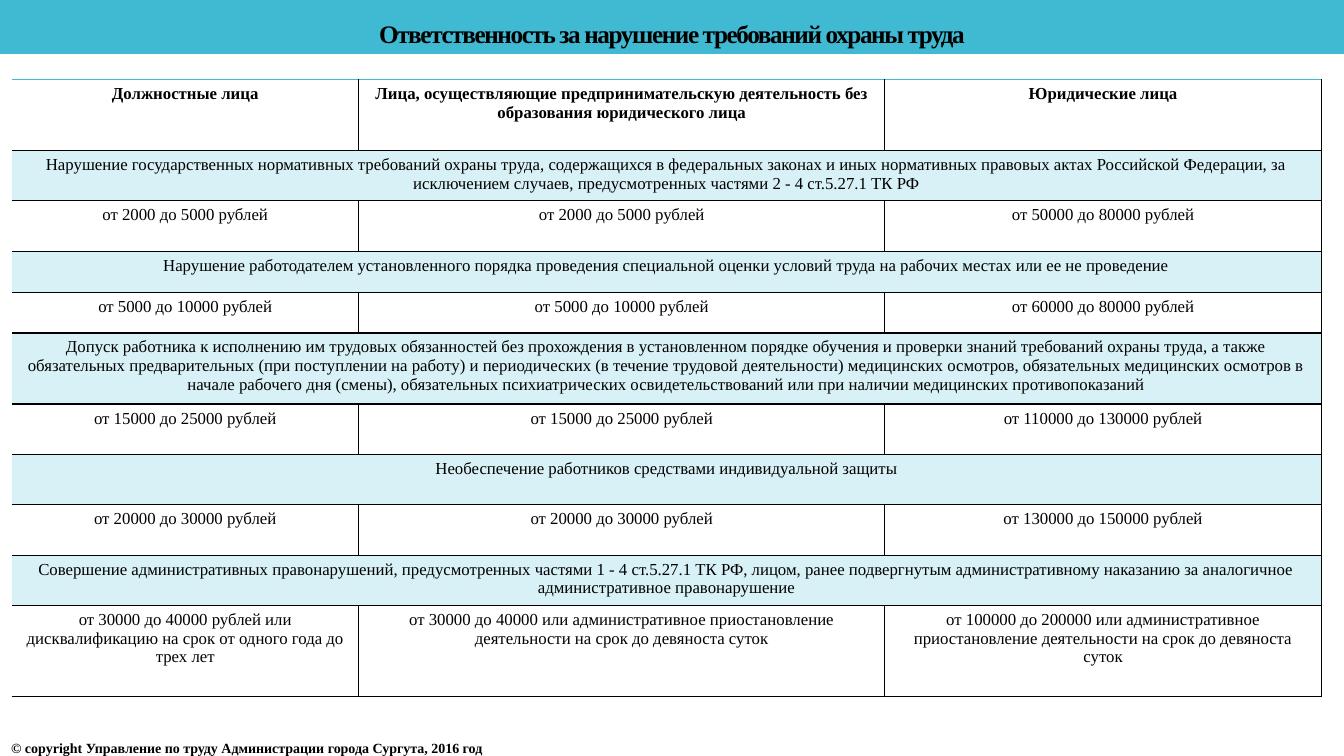
from lxml.etree import SubElement
from pptx import Presentation
from pptx.dml.color import RGBColor
from pptx.enum.shapes import MSO_SHAPE
from pptx.enum.text import MSO_ANCHOR, PP_ALIGN
from pptx.oxml import parse_xml
from pptx.oxml.ns import nsdecls, qn
from pptx.util import Cm, Pt

TITLE = "Ответственность за нарушение требований охраны труда"
COPYRIGHT = "© copyright Управление по труду Администрации города Сургута, 2016 год"
COLUMN_WIDTHS = [8.74, 13.26, 11]
ROWS = [
    (1.79, ["Должностные лица",
            "Лица, осуществляющие предпринимательскую деятельность без образования юридического лица",
            "Юридические лица"]),
    (1.27, ["Нарушение государственных нормативных требований охраны труда, содержащихся в "
            "федеральных законах и иных нормативных правовых актах Российской Федерации, за "
            "исключением случаев, предусмотренных частями 2 - 4 ст.5.27.1 ТК РФ"]),
    (1.27, ["от 2000 до 5000 рублей", "от 2000 до 5000 рублей", "от 50000 до 80000 рублей"]),
    (1.03, ["Нарушение работодателем установленного порядка проведения специальной оценки "
            "условий труда на рабочих местах или ее не проведение"]),
    (1.03, ["от 5000 до 10000 рублей", "от 5000 до 10000 рублей", "от 60000 до 80000 рублей"]),
    (1.79, ["Допуск работника к исполнению им трудовых обязанностей без прохождения в "
            "установленном порядке обучения и проверки знаний требований охраны труда, а также "
            "обязательных предварительных (при поступлении на работу) и периодических (в течение "
            "трудовой деятельности) медицинских осмотров, обязательных медицинских осмотров в "
            "начале рабочего дня (смены), обязательных психиатрических освидетельствований или "
            "при наличии медицинских противопоказаний"]),
    (1.27, ["от 15000 до 25000 рублей", "от 15000 до 25000 рублей", "от 110000 до 130000 рублей"]),
    (1.27, ["Необеспечение работников средствами индивидуальной защиты"]),
    (1.27, ["от 20000 до 30000 рублей", "от 20000 до 30000 рублей", "от 130000 до 150000 рублей"]),
    (1.27, ["Совершение административных правонарушений, предусмотренных частями 1 - 4 "
            "ст.5.27.1 ТК РФ, лицом, ранее подвергнутым административному наказанию за "
            "аналогичное административное правонарушение"]),
    (2.28, ["от 30000 до 40000 рублей или дисквалификацию на срок от одного года до трех лет",
            "от 30000 до 40000 или административное приостановление деятельности на срок до девяноста суток",
            "от 100000 до 200000 или административное приостановление деятельности на срок до девяноста суток"]),
]

TEAL = RGBColor(0x40, 0xBA, 0xD2)
BLACK = RGBColor(0, 0, 0)
FONT = "Times New Roman"


def write(text_frame, text, size, bold, alignment):
    text_frame.text = text
    paragraph = text_frame.paragraphs[0]
    paragraph.alignment = alignment
    font = paragraph.runs[0].font
    font.name, font.size, font.bold = FONT, Pt(size), bold
    font.color.rgb = BLACK
    return paragraph


def set_borders(cell, colors):
    properties = cell._tc.get_or_add_tcPr()
    for position, side in enumerate("LRTB"):
        color = colors.get(side)
        fill = f'<a:solidFill><a:srgbClr val="{color}"/></a:solidFill>' if color else "<a:noFill/>"
        line = parse_xml(f'<a:ln{side} {nsdecls("a")} w="12700">{fill}</a:ln{side}>')
        properties.insert(position, line)


def shade(cell):
    cell.fill.solid()
    cell.fill.fore_color.rgb = TEAL
    color = cell._tc.tcPr.find(qn("a:solidFill")).find(qn("a:srgbClr"))
    SubElement(color, qn("a:alpha")).set("val", "20000")


def add_title(slide, width):
    banner = slide.shapes.add_shape(MSO_SHAPE.RECTANGLE, 0, 0, width, Cm(1.35))
    banner.shadow.inherit = False
    banner.fill.solid()
    banner.fill.fore_color.rgb = TEAL
    banner.line.color.rgb = TEAL
    banner.line.width = Pt(0.75)
    banner.text_frame.vertical_anchor = MSO_ANCHOR.BOTTOM
    paragraph = write(banner.text_frame, TITLE, 18, True, PP_ALIGN.CENTER)
    paragraph.line_spacing = 0.9
    paragraph.runs[0].font._element.set("spc", "-100")


def add_copyright(slide):
    box = slide.shapes.add_textbox(Cm(0.28), Cm(18.62), Cm(19.2), Cm(0.43))
    text_frame = box.text_frame
    text_frame.word_wrap = True
    text_frame.vertical_anchor = MSO_ANCHOR.BOTTOM
    text_frame.margin_left = text_frame.margin_right = 0
    text_frame.margin_top = text_frame.margin_bottom = 0
    write(text_frame, COPYRIGHT, 10, True, PP_ALIGN.LEFT)


def add_penalties(slide):
    last = len(COLUMN_WIDTHS) - 1
    height = sum(row_height for row_height, _ in ROWS)
    frame = slide.shapes.add_table(len(ROWS), last + 1, Cm(0.3), Cm(2),
                                   Cm(sum(COLUMN_WIDTHS)), Cm(height))
    table = frame.table
    table.first_row = table.horz_banding = False
    for column, width in zip(table.columns, COLUMN_WIDTHS):
        column.width = Cm(width)
    for row, (row_height, texts) in enumerate(ROWS):
        table.rows[row].height = Cm(row_height)
        merged = len(texts) == 1
        if merged:
            table.cell(row, 0).merge(table.cell(row, last))
        for column in range(last + 1):
            cell = table.cell(row, column)
            colors = {"T": BLACK if row else TEAL, "B": BLACK}
            if merged:
                shade(cell)
            else:
                cell.fill.background()
            if not merged or column in (0, last):
                colors["R"] = BLACK
            if not merged and column:
                colors["L"] = BLACK
            set_borders(cell, colors)
            if column < len(texts):
                write(cell.text_frame, texts[column], 12, row == 0, PP_ALIGN.CENTER)


def main():
    presentation = Presentation()
    presentation.slide_width = Cm(33.87)
    presentation.slide_height = Cm(19.05)
    slide = presentation.slides.add_slide(presentation.slide_layouts[6])
    add_title(slide, presentation.slide_width)
    add_copyright(slide)
    add_penalties(slide)
    presentation.save("out.pptx")


if __name__ == "__main__":
    main()
